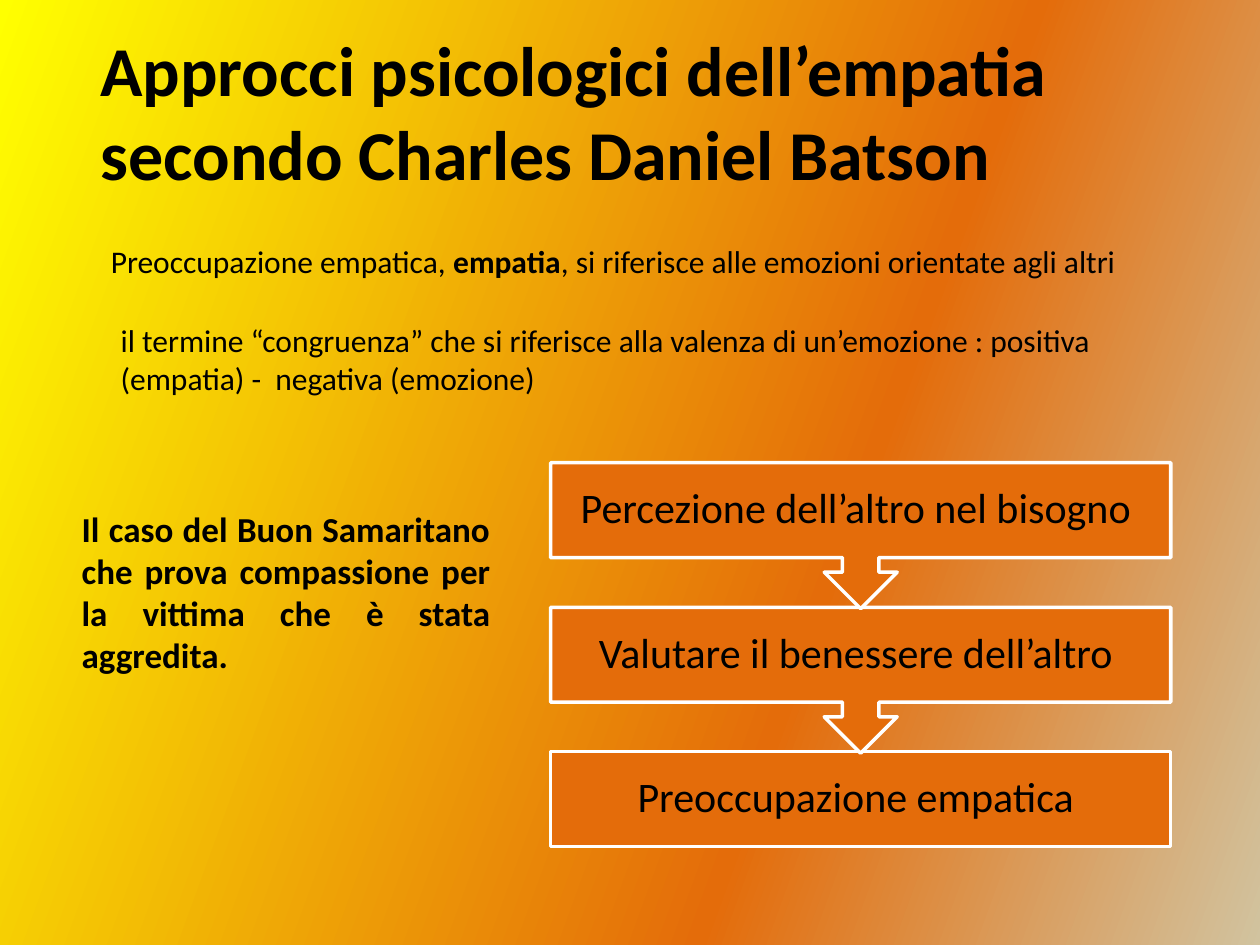
from copy import deepcopy

from lxml import etree
from pptx import Presentation
from pptx import util as u
from pptx.dml.color import RGBColor
from pptx.enum import shapes, text
from pptx.oxml import ns

YELLOW = RGBColor(0xFF, 0xFF, 0x00)
ORANGE = RGBColor(0xE4, 0x6C, 0x0A)
SAND = RGBColor(0xD1, 0xC3, 0x9F)
BLACK = RGBColor(0, 0, 0)
WHITE = RGBColor(0xFF, 0xFF, 0xFF)


class SlideBuilder:
    font = "Calibri"

    def __init__(self, slide):
        self.slide = slide

    def background(self, stops, angle):
        fill = self.slide.background.fill
        fill.gradient()
        fill.gradient_angle = angle
        stop_list = self.slide.element.xpath(".//a:gsLst")[0]
        while len(stop_list) < len(stops):
            stop_list.append(deepcopy(stop_list[-1]))
        for stop, (position, color) in zip(fill.gradient_stops, stops):
            stop.position = position
            stop.color.rgb = color

    def style_runs(self, paragraph, size, bold):
        for run in paragraph.runs:
            run.font.name = self.font
            run.font.size = u.Pt(size)
            run.font.bold = bold
            run.font.color.rgb = BLACK

    def text_box(self, box, content, size, bold=False, align=text.PP_ALIGN.LEFT, parent=None):
        shape = (parent or self.slide).shapes.add_textbox(*map(u.Pt, box))
        frame = shape.text_frame
        frame.word_wrap = True
        frame.auto_size = text.MSO_AUTO_SIZE.SHAPE_TO_FIT_TEXT
        paragraph = frame.paragraphs[0]
        paragraph.text = content
        paragraph.alignment = align
        self.style_runs(paragraph, size, bold)
        return shape

    def outline_text(self, shape, color, width):
        for run in shape.text_frame.paragraphs[0].runs:
            line = etree.Element(ns.qn("a:ln"), w=str(u.Pt(width)))
            fill = etree.SubElement(line, ns.qn("a:solidFill"))
            etree.SubElement(fill, ns.qn("a:srgbClr"), val=str(color))
            run.font._element.insert(0, line)

    def block(self, parent, kind, box, rotation=0):
        shape = parent.shapes.add_shape(kind, *map(u.Pt, box))
        shape.shadow.inherit = False
        shape.rotation = rotation
        shape.fill.solid()
        shape.fill.fore_color.rgb = ORANGE
        shape.line.color.rgb = WHITE
        shape.line.width = u.Pt(2)

    def label(self, parent, box, content):
        shape = self.text_box(box, content, 24, align=text.PP_ALIGN.CENTER, parent=parent)
        frame = shape.text_frame
        frame.auto_size = text.MSO_AUTO_SIZE.NONE
        frame.vertical_anchor = text.MSO_ANCHOR.MIDDLE
        frame.margin_left = frame.margin_right = u.Pt(13.7)
        frame.margin_top = frame.margin_bottom = u.Pt(13.7)
        frame.paragraphs[0].line_spacing = 0.9

    def step_flow(self, left, top, width, pitch, steps):
        box_height, callout_height = 54.2, 83.4
        group = self.slide.shapes.add_group_shape()
        # Last step first, so that each arrow tip lies over the box below
        for index in reversed(range(len(steps))):
            y = top + index * pitch
            if index == len(steps) - 1:
                self.block(group, shapes.MSO_SHAPE.RECTANGLE, (left, y, width, box_height))
            else:
                self.block(group, shapes.MSO_SHAPE.UP_ARROW_CALLOUT,
                           (left, y, width, callout_height), rotation=180)
            self.label(group, (left, y, width, box_height), steps[index])


def main():
    presentation = Presentation()
    presentation.slide_width = u.Pt(720)
    presentation.slide_height = u.Pt(540)
    builder = SlideBuilder(presentation.slides.add_slide(presentation.slide_layouts[6]))
    builder.background([(0, YELLOW), (0.65, ORANGE), (1, SAND)], angle=340)

    # Title
    title = builder.text_box((50.4, 11.5, 624, 104.4),
                             "Approcci psicologici dell’empatia\vsecondo Charles Daniel Batson",
                             40, bold=True)
    builder.outline_text(title, ORANGE, 1)

    # Definitions
    definition = builder.text_box((56.2, 134.6, 624, 29), "Preoccupazione empatica, ", 18)
    paragraph = definition.text_frame.paragraphs[0]
    for part in ("empatia", ", si riferisce alle emozioni orientate agli altri"):
        paragraph.add_run().text = part
    builder.style_runs(paragraph, 18, False)
    paragraph.runs[1].font.bold = True
    builder.text_box((61.9, 180, 590.4, 51),
                     "il termine “congruenza” che si riferisce alla valenza di un’emozione : "
                     "positiva (empatia) -  negativa (emozione)", 18)

    # Example
    builder.text_box((39.6, 286.6, 247.7, 104.4),
                     "Il caso del Buon Samaritano che prova compassione per la vittima "
                     "che è stata aggredita.", 20, bold=True, align=text.PP_ALIGN.JUSTIFY)

    # Steps towards empathic concern
    builder.step_flow(314.6, 264.4, 354.4, 82.6,
                      ["Percezione dell’altro nel bisogno ",
                       "Valutare il benessere dell’altro ",
                       "Preoccupazione empatica "])

    presentation.save("out.pptx")


if __name__ == "__main__":
    main()
